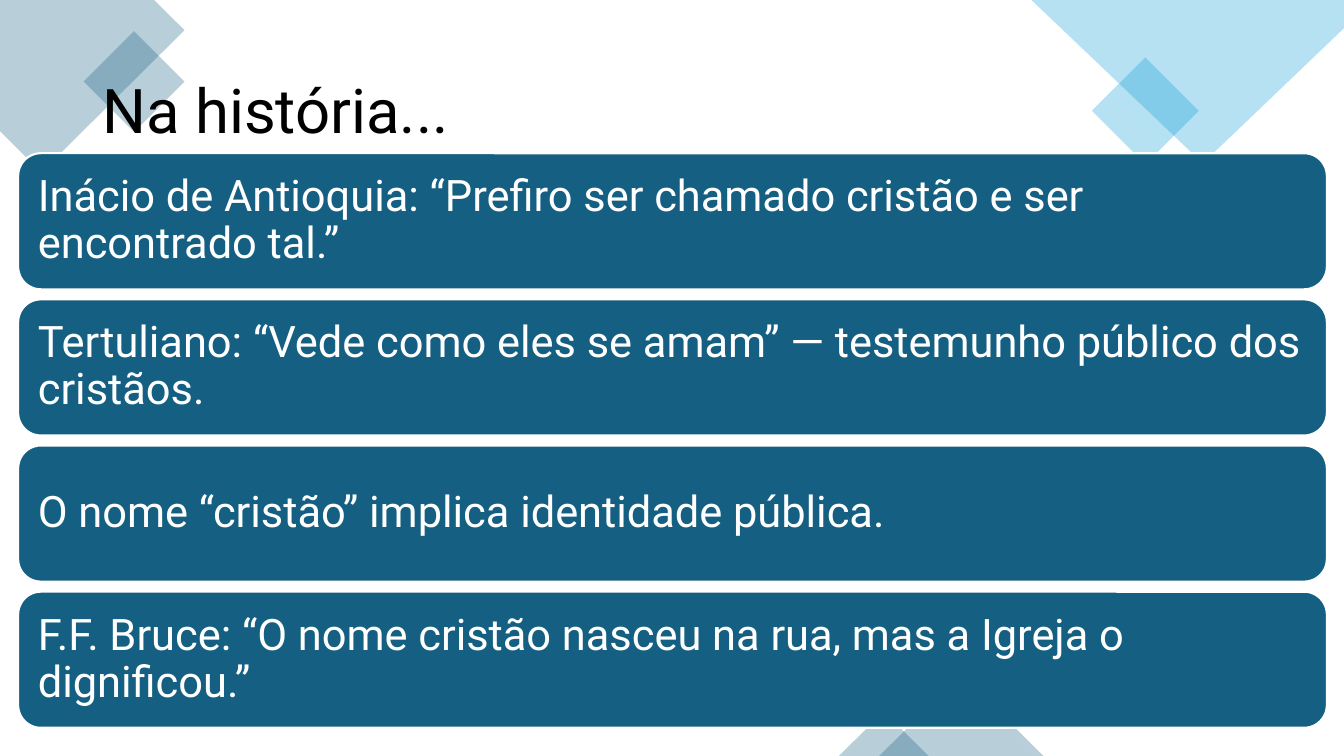
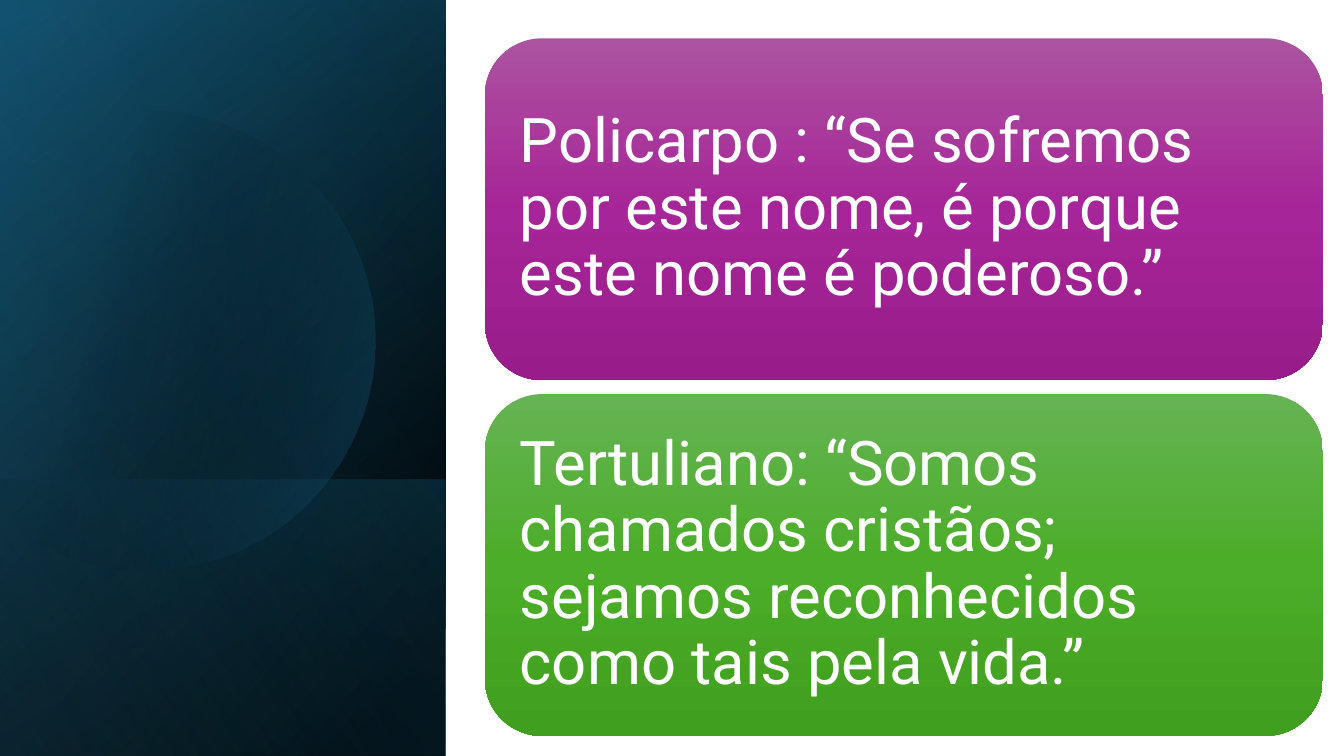
"""Build two slides of quotations about the Christian name."""
from math import acos, cos, sin

from lxml import etree
from pptx import Presentation
from pptx.dml.color import RGBColor
from pptx.enum.shapes import MSO_SHAPE
from pptx.enum.text import MSO_ANCHOR
from pptx.oxml.ns import nsdecls, qn
from pptx.util import Inches, Pt

BOX = MSO_SHAPE.RECTANGLE
ROUND = MSO_SHAPE.ROUNDED_RECTANGLE
GEM = MSO_SHAPE.DIAMOND
PEAK = MSO_SHAPE.ISOSCELES_TRIANGLE
MIDDLE = MSO_ANCHOR.MIDDLE


class Theme:
    font = "Roboto"
    black, white = "000000", "FFFFFF"
    teal, sky, navy, pale = "156082", "0F9ED5", "104862", "46B1E1"
    plum = [(0, "AC53A0", 100), (50, "A62598", 100), (100, "991C8B", 100)]
    green = [(0, "66B354", 100), (50, "4BAD28", 100), (100, "409F1E", 100)]
    large, small = 44, 31
    veil = 30


def paint(shape, stops, angle=0):
    """Fill with one colour or a gradient; stops are place, colour, opacity."""
    shape.shadow.inherit = False
    shape.line.fill.background()
    shape.fill.background()
    tints = [f'<a:srgbClr val="{tint}"><a:alpha val="{alpha * 1000}"/></a:srgbClr>'
             for _, tint, alpha in stops]
    if len(stops) == 1:
        xml = f'<a:solidFill {nsdecls("a")}>{tints[0]}</a:solidFill>'
    else:
        marks = "".join(f'<a:gs pos="{stop[0] * 1000}">{tint}</a:gs>'
                        for stop, tint in zip(stops, tints))
        xml = (f'<a:gradFill {nsdecls("a")} rotWithShape="1"><a:gsLst>{marks}</a:gsLst>'
               f'<a:lin ang="{angle * 60000}" scaled="0"/></a:gradFill>')
    props = shape._element.spPr
    props.replace(props.find(qn("a:noFill")), etree.fromstring(xml))


def write(shape, text, size, tint, side, edge):
    """Put one left-aligned run of text in the middle of a shape."""
    frame = shape.text_frame
    frame.word_wrap = True
    frame.vertical_anchor = MIDDLE
    frame.margin_left = frame.margin_right = Inches(side)
    frame.margin_top = frame.margin_bottom = Inches(edge)
    para = frame.paragraphs[0]
    para.alignment = 1
    para.line_spacing = 0.9
    run = para.add_run()
    run.text = text
    run.font.name = Theme.font
    run.font.size = Pt(size)
    run.font.color.rgb = RGBColor.from_string(tint)


deck = Presentation()
deck.slide_width, deck.slide_height = Inches(13.33), Inches(7.5)
blank = deck.slide_layouts[6]

page = deck.slides.add_slide(blank)
corners = [
    (Theme.teal, [(1.53, 0), (0, 0), (0, 1.3), (0.41, 1.71), (1.83, 0.3)]),
    (Theme.sky, [(13.33, 0), (10.23, 0), (11.93, 1.62), (13.33, 0.28)]),
]
for tint, spots in corners:
    ends = [(Inches(x), Inches(y)) for x, y in spots]
    pen = page.shapes.build_freeform(*ends[0])
    pen.add_line_segments(ends[1:], close=True)
    paint(pen.convert_to_shape(), [(0, tint, Theme.veil)])

accents = [
    (GEM, Theme.teal, (0.83, 0.31, 1, 1)),
    (GEM, Theme.sky, (10.83, 0.57, 1.06, 1.06)),
    (PEAK, Theme.teal, (8.72, 6.69, 1.63, 0.81)),
    (PEAK, Theme.teal, (8.32, 7.06, 0.89, 0.44)),
]
for kind, tint, place in accents:
    shape = page.shapes.add_shape(kind, *map(Inches, place))
    paint(shape, [(0, tint, Theme.veil)])

title = page.shapes.add_textbox(Inches(0.92), Inches(0.4), Inches(11.5), Inches(1.45))
write(title, "Na história...", Theme.large, Theme.black, 0.1, 0.05)

quotes = [
    "Inácio de Antioquia: “Prefiro ser chamado cristão e ser encontrado tal.”",
    "Tertuliano: “Vede como eles se amam” — testemunho público dos cristãos.",
    "O nome “cristão” implica identidade pública.",
    "F.F. Bruce: “O nome cristão nasceu na rua, mas a Igreja o dignificou.”",
]
for row, quote in enumerate(quotes):
    card = page.shapes.add_shape(
        ROUND, Inches(0.18), Inches(1.52 + 1.45 * row), Inches(12.98), Inches(1.35))
    paint(card, [(0, Theme.teal, 100)])
    card.line.color.rgb = RGBColor.from_string(Theme.white)
    card.line.width = Pt(1.5)
    write(card, quote, Theme.small, Theme.white, 0.13, 0.13)

page = deck.slides.add_slide(blank)
wide = 4.42
layers = [
    (0, 7.5, 50, [(8, Theme.black, 100), (100, Theme.navy, 100)]),
    (0, 7.5, 30, [(0, Theme.black, 0), (99, Theme.teal, 46)]),
    (4.76, 2.74, 130, [(2, Theme.teal, 29), (100, Theme.black, 30)]),
    None,
    (0, 7.5, 120, [(0, Theme.black, 0), (99, Theme.pale, 11)]),
]
for layer in layers:
    if layer:
        top, tall, angle, stops = layer
        panel = page.shapes.add_shape(
            BOX, Inches((wide - tall) / 2), Inches(top + (tall - wide) / 2),
            Inches(tall), Inches(wide))
        panel.rotation = 90
        panel._element.spPr.find(qn("a:xfrm")).set("flipH", "1")
        paint(panel, stops, angle)
        continue
    mid, level, reach, steps = 1.44, 3.38, 2.28, 120
    sweep = acos(-mid / reach)
    turns = [sweep * (2 * step / steps - 1) for step in range(steps + 1)]
    ends = [(Inches(mid + reach * cos(turn)), Inches(level + reach * sin(turn)))
            for turn in turns]
    pen = page.shapes.build_freeform(*ends[0])
    pen.add_line_segments(ends[1:], close=True)
    paint(pen.convert_to_shape(), [(29, Theme.black, 0), (100, Theme.teal, 43)], 14)

sayings = [
    (Theme.plum, "Policarpo : “Se sofremos por este nome, é porque este nome é poderoso.”"),
    (Theme.green, "Tertuliano: “Somos chamados cristãos; sejamos reconhecidos como tais pela vida.”"),
]
for row, (stops, saying) in enumerate(sayings):
    card = page.shapes.add_shape(
        ROUND, Inches(4.81), Inches(0.38 + 3.53 * row), Inches(8.31), Inches(3.39))
    paint(card, stops, 90)
    write(card, saying, Theme.large, Theme.white, 0.18, 0.18)

deck.save("out.pptx")
